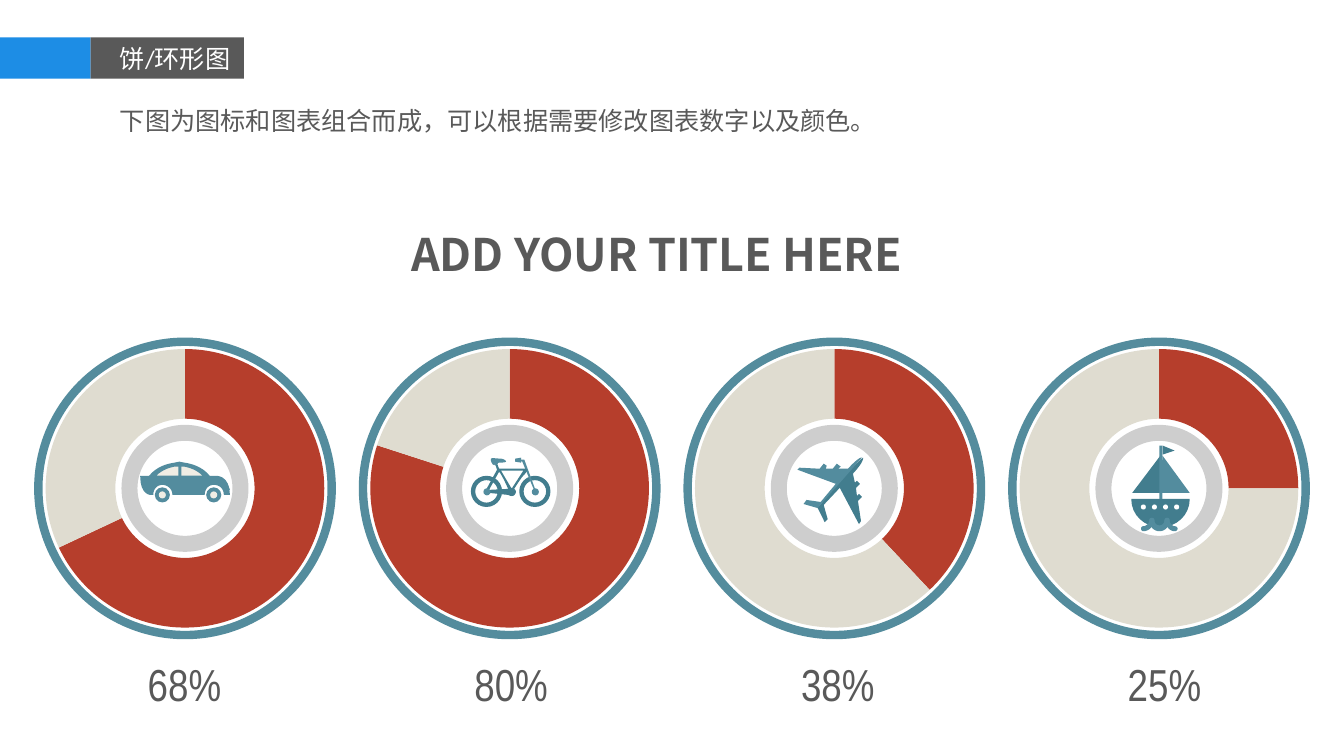
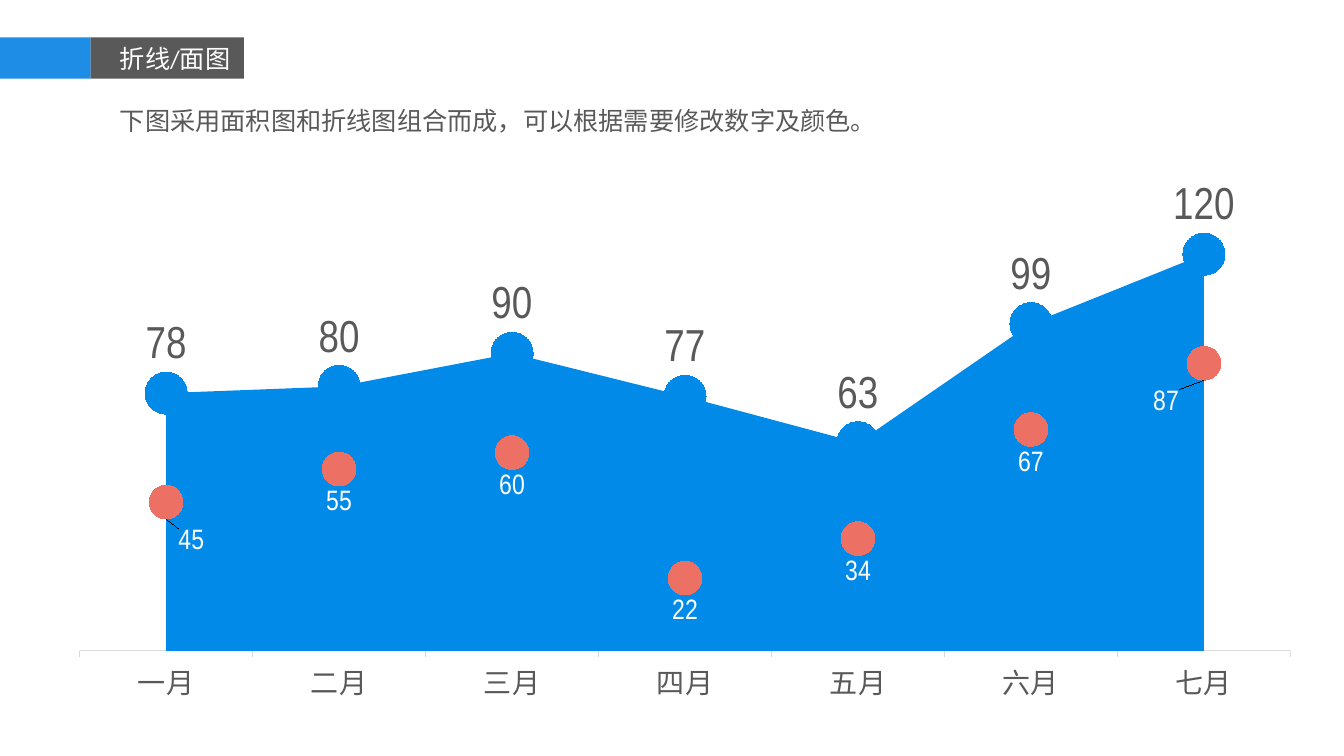
from pptx import Presentation
from pptx.chart.data import CategoryChartData
from pptx.dml.color import RGBColor
from pptx.enum.chart import XL_CHART_TYPE as ChartType, XL_LABEL_POSITION as LabelPosition
from pptx.enum.chart import XL_MARKER_STYLE as MarkerStyle, XL_TICK_MARK as TickMark
from pptx.enum.shapes import MSO_SHAPE as Preset
from pptx.enum.text import MSO_ANCHOR as Anchor, PP_ALIGN as Align
from pptx.oxml import parse_xml
from pptx.oxml.ns import nsdecls
from pptx.util import Inches, Pt

# Colours
WHITE = RGBColor(0xFF, 0xFF, 0xFF)
BLACK = RGBColor(0x00, 0x00, 0x00)
HEADER_BLUE = RGBColor(0x1D, 0x8D, 0xE5)
GREY = RGBColor(0x59, 0x59, 0x59)
RING = RGBColor(0x54, 0x8C, 0x9D)
RED = RGBColor(0xB6, 0x3E, 0x2C)
SAND = RGBColor(0xDF, 0xDC, 0xD0)
SHADE = RGBColor(0x0D, 0x0D, 0x0D)
DARK_TEAL = RGBColor(0x42, 0x7D, 0x8E)
TEAL = RGBColor(0x53, 0x8C, 0x9E)
CREAM = RGBColor(0xF0, 0xED, 0xE4)
AREA_BLUE = RGBColor(0x02, 0x8A, 0xE9)
CORAL = RGBColor(0xEC, 0x70, 0x64)
AXIS_GREY = RGBColor(0xD9, 0xD9, 0xD9)

# Fonts
BODY_FONT = "Calibri"
NUMBER_FONT = "Arial Narrow"
CHINESE_FONT = "Noto Sans CJK SC"


def flatten(contour, steps=8):
    """Turn a contour into points: pairs are corners, six numbers a cubic curve."""
    points = []
    for item in contour:
        if len(item) == 2:
            points.append(item)
            continue
        x0, y0 = points[-1]
        x1, y1, x2, y2, x3, y3 = item
        for step in range(1, steps + 1):
            t = step / steps
            u = 1 - t
            points.append((u**3 * x0 + 3 * u * u * t * x1 + 3 * u * t * t * x2 + t**3 * x3,
                           u**3 * y0 + 3 * u * u * t * y1 + 3 * u * t * t * y2 + t**3 * y3))
    return [(Inches(x), Inches(y)) for x, y in points]


def set_font(font, name, size, color, bold=False):
    font.name, font.size, font.bold = name, Pt(size), bold
    font.color.rgb = color


class Deck:
    def __init__(self):
        self.presentation = Presentation()
        self.presentation.slide_width = Inches(13.33)
        self.presentation.slide_height = Inches(7.5)
        self.slide = None

    def new_slide(self, heading, description):
        self.slide = self.presentation.slides.add_slide(self.presentation.slide_layouts[6])
        self.shape(Preset.RECTANGLE, 0, 0.37, 0.9, 0.41, HEADER_BLUE)
        self.shape(Preset.RECTANGLE, 0.9, 0.37, 1.52, 0.41, GREY)
        frame = self.text(heading, 1.09, 0.37, 1.4, 0.41, 18, color=WHITE)
        frame.margin_right = 0
        frame.vertical_anchor = Anchor.MIDDLE
        frame = self.text(description, 1.09, 0.94, 7.78, 0.46, 18)
        frame.paragraphs[0].line_spacing = 1.2

    def text(self, words, left, top, width, height, size, font=BODY_FONT,
             color=GREY, bold=False, align=Align.LEFT):
        box = self.slide.shapes.add_textbox(Inches(left), Inches(top), Inches(width), Inches(height))
        frame = box.text_frame
        frame.word_wrap = True
        paragraph = frame.paragraphs[0]
        paragraph.text = words
        paragraph.alignment = align
        set_font(paragraph.font, font, size, color, bold)
        return frame

    def finish(self, shape, color):
        shape.shadow.inherit = False
        shape.fill.solid()
        shape.fill.fore_color.rgb = color
        shape.line.fill.background()
        return shape

    def shape(self, preset, left, top, width, height, color):
        shape = self.slide.shapes.add_shape(
            preset, Inches(left), Inches(top), Inches(width), Inches(height))
        return self.finish(shape, color)

    def dot(self, x, y, diameter, color):
        return self.shape(Preset.OVAL, x - diameter / 2, y - diameter / 2, diameter, diameter, color)

    def outline(self, color, *contours):
        """Draw one freeform; later contours cut holes in the first."""
        builder = None
        for contour in contours:
            start, *rest = flatten(contour)
            if builder is None:
                builder = self.slide.shapes.build_freeform(*start)
            else:
                builder.move_to(*start)
            builder.add_line_segments(rest, close=True)
        return self.finish(builder.convert_to_shape(), color)

    def chart(self, kind, left, top, width, height, categories, series, layout):
        data = CategoryChartData()
        data.categories = categories
        for number, values in enumerate(series, 1):
            data.add_series(f"Series {number}", values)
        chart = self.slide.shapes.add_chart(
            kind, Inches(left), Inches(top), Inches(width), Inches(height), data).chart
        set_font(chart.font, BODY_FONT, 10, BLACK)
        chart.has_title = False
        chart.has_legend = False
        # Fixed inner plot area
        x, y, w, h = layout
        plot_area = chart.element.xpath("c:chart/c:plotArea")[0]
        for old_layout in plot_area.xpath("c:layout"):
            plot_area.remove(old_layout)
        plot_area.insert(0, parse_xml(
            f'<c:layout {nsdecls("c")}><c:manualLayout><c:layoutTarget val="inner"/>'
            '<c:xMode val="edge"/><c:yMode val="edge"/>'
            f'<c:x val="{x}"/><c:y val="{y}"/><c:w val="{w}"/><c:h val="{h}"/>'
            '</c:manualLayout></c:layout>'))
        return chart

    def gauge(self, left, percent):
        """Ringed doughnut chart with a translucent hub."""
        top, size, hub = 3.39, 2.91, 1.26
        ring = self.shape(Preset.OVAL, left, top, size, size, WHITE)
        ring.line.color.rgb = RING
        ring.line.width = Pt(6)
        chart = self.chart(ChartType.DOUGHNUT, left, top, size, size, ["1", "2"],
                           [(percent, 100 - percent)], (0.025, 0.025, 0.95, 0.95))
        plot = chart.plots[0]
        plot.has_data_labels = False
        plot.vary_by_categories = True
        chart.element.xpath(".//c:holeSize")[0].set("val", "35")
        for index, color in enumerate((RED, SAND)):
            point = plot.series[0].points[index]
            point.format.fill.solid()
            point.format.fill.fore_color.rgb = color
            point.format.line.fill.background()
        inset = (size - hub) / 2
        donut = self.shape(Preset.DONUT, left + inset, top + inset, hub, hub, SHADE)
        donut.adjustments[0] = 0.126
        color_element = donut.fill._xPr.xpath("a:solidFill/a:srgbClr")[0]
        color_element.append(parse_xml(f'<a:alpha {nsdecls("a")} val="20000"/>'))


# Icons
def draw_car(deck):
    deck.outline(TEAL, [(1.39, 4.72), (2.14, 4.72), (2.14, 4.72, 2.28, 4.71, 2.28, 4.91), (2.22, 4.91),
                        (2.22, 4.85, 2.18, 4.81, 2.12, 4.81), (2.07, 4.81, 2.03, 4.85, 2.03, 4.91),
                        (1.71, 4.91), (1.71, 4.85, 1.66, 4.81, 1.61, 4.81),
                        (1.56, 4.81, 1.52, 4.85, 1.52, 4.91), (1.5, 4.91),
                        (1.5, 4.91, 1.39, 4.92, 1.39, 4.72)])
    deck.outline(CREAM, [(1.66, 4.62), (1.67, 4.61), (1.91, 4.61), (1.94, 4.63, 1.98, 4.64, 2.01, 4.67),
                         (2.05, 4.72), (2.05, 4.75), (1.53, 4.75), (1.53, 4.7)])
    deck.outline(TEAL,
                 [(1.48, 4.72), (1.55, 4.63, 1.66, 4.6, 1.73, 4.59), (1.78, 4.58), (1.83, 4.59),
                  (1.9, 4.6, 2.01, 4.63, 2.08, 4.72), (2.11, 4.76), (1.45, 4.76)],
                 [(1.83, 4.63), (1.73, 4.63), (1.68, 4.64, 1.61, 4.66, 1.55, 4.72), (2.01, 4.72),
                  (1.95, 4.66, 1.88, 4.64, 1.83, 4.63)])
    deck.shape(Preset.RECTANGLE, 1.77, 4.6, 0.03, 0.15, TEAL)
    deck.outline(TEAL, [(2.24, 4.86), (2.23, 4.86, 2.22, 4.85, 2.22, 4.83), (2.22, 4.82, 2.23, 4.81, 2.24, 4.81),
                        (2.26, 4.81), (2.28, 4.86)])
    for x in (1.61, 2.12):
        deck.dot(x, 4.91, 0.15, TEAL)
        deck.dot(x, 4.91, 0.07, CREAM)


def draw_bicycle(deck):
    for left in (4.67, 5.15):
        wheel = deck.shape(Preset.DONUT, left, 4.72, 0.31, 0.31, DARK_TEAL)
        wheel.adjustments[0] = 0.14
    # Fork, frame, saddle and handlebar
    deck.outline(TEAL, [(5.31, 4.86), (5.2, 4.56), (5.12, 4.56), (5.12, 4.57), (5.18, 4.58), (5.3, 4.87)])
    deck.outline(DARK_TEAL,
                 [(5.22, 4.65), (4.95, 4.65), (4.92, 4.57), (4.91, 4.6), (4.93, 4.66), (4.82, 4.86),
                  (4.84, 4.88), (4.85, 4.89), (5.04, 4.91), (5.04, 4.91, 5.09, 4.94, 5.11, 4.9),
                  (5.13, 4.87, 5.1, 4.85, 5.1, 4.85), (5.1, 4.85, 5.18, 4.72, 5.2, 4.71), (5.23, 4.67)],
                 [(4.85, 4.86), (4.95, 4.68), (4.98, 4.71, 5.04, 4.85, 5.04, 4.85)],
                 [(5.08, 4.84), (5.07, 4.84), (4.97, 4.67), (5.19, 4.67)])
    deck.outline(TEAL, [(5.02, 4.58), (5.02, 4.58, 5.02, 4.56, 4.97, 4.55), (4.93, 4.55, 4.88, 4.54, 4.87, 4.55),
                        (4.86, 4.56, 4.88, 4.6, 4.89, 4.61), (4.91, 4.62, 4.93, 4.59, 4.95, 4.59),
                        (4.96, 4.59, 5.01, 4.59, 5.02, 4.58)])
    for x in (4.83, 5.31):
        deck.dot(x, 4.88, 0.07, TEAL)
    deck.outline(TEAL, [(4.93, 4.59), (4.91, 4.61), (4.91, 4.62), (4.94, 4.6)])
    deck.outline(TEAL, [(5.17, 4.59), (5.17, 4.54), (5.11, 4.55), (5.11, 4.58)])


def draw_plane(deck):
    deck.outline(DARK_TEAL, [(8.46, 4.7), (8.48, 4.79), (8.5, 4.77), (8.53, 4.8), (8.49, 4.84), (8.5, 4.92),
                             (8.52, 4.9), (8.55, 4.93), (8.51, 4.97), (8.54, 5.17), (8.52, 5.2),
                             (8.33, 4.84), (8.17, 5.01), (8.21, 5.15), (8.18, 5.18), (8.11, 5.04),
                             (8.37, 4.72), (8.56, 4.54), (8.56, 4.54, 8.58, 4.57, 8.46, 4.7)])
    deck.outline(TEAL, [(8.41, 4.65), (8.31, 4.65), (8.34, 4.63), (8.3, 4.6), (8.26, 4.65), (8.19, 4.65),
                        (8.2, 4.62), (8.17, 4.6), (8.13, 4.65), (7.93, 4.64), (7.91, 4.66), (8.29, 4.8),
                        (8.14, 4.98), (8, 4.96), (7.97, 5), (8.11, 5.04), (8.55, 4.54),
                        (8.55, 4.54, 8.53, 4.52, 8.41, 4.65)])


def draw_boat(deck):
    deck.outline(DARK_TEAL, [(11.22, 4.95), (11.22, 5.11, 11.35, 5.23, 11.51, 5.23),
                             (11.67, 5.23, 11.8, 5.11, 11.8, 4.95)])
    for porthole in range(4):
        deck.dot(11.34 + 0.11 * porthole, 5.03, 0.05, WHITE)
    # Sails, mast and flag
    deck.outline(DARK_TEAL, [(11.51, 4.52), (11.23, 4.89), (11.53, 4.89)])
    deck.outline(TEAL, [(11.53, 4.52), (11.8, 4.89), (11.51, 4.89)])
    deck.shape(Preset.RECTANGLE, 11.5, 4.42, 0.03, 0.53, TEAL)
    deck.outline(DARK_TEAL, [(11.53, 4.42), (11.65, 4.47), (11.53, 4.51)])
    # Waves
    deck.outline(TEAL, [(11.4, 5.16), (11.4, 5.19, 11.37, 5.22, 11.34, 5.22), (11.31, 5.22, 11.31, 5.27, 11.34, 5.27),
                        (11.4, 5.27, 11.44, 5.22, 11.45, 5.16), (11.45, 5.13, 11.4, 5.13, 11.4, 5.16)])
    deck.outline(TEAL, [(11.55, 5.16), (11.55, 5.23, 11.45, 5.23, 11.45, 5.16), (11.44, 5.13, 11.4, 5.13, 11.4, 5.16),
                        (11.4, 5.22, 11.44, 5.27, 11.5, 5.27), (11.56, 5.27, 11.6, 5.22, 11.6, 5.16),
                        (11.6, 5.13, 11.56, 5.13, 11.55, 5.16)])
    deck.outline(TEAL, [(11.65, 5.22), (11.63, 5.22, 11.6, 5.19, 11.6, 5.16), (11.6, 5.13, 11.55, 5.13, 11.55, 5.16),
                        (11.56, 5.22, 11.6, 5.27, 11.65, 5.27), (11.69, 5.27, 11.69, 5.22, 11.65, 5.22)])


def add_gauge_slide(deck):
    deck.new_slide("饼/环形图", "下图为图标和图表组合而成，可以根据需要修改图表数字以及颜色。")
    deck.text("ADD YOUR TITLE HERE", 3.98, 2.2, 5.37, 0.64, 32, CHINESE_FONT, bold=True)
    gauges = [(68, draw_car), (80, draw_bicycle), (38, draw_plane), (25, draw_boat)]
    for column, (percent, draw_icon) in enumerate(gauges):
        deck.gauge(0.38 + 3.22 * column, percent)
        draw_icon(deck)
        deck.text(f"{percent}%", 1.33 + 3.24 * column, 6.47, 1, 0.64, 32, NUMBER_FONT, align=Align.CENTER)


def add_area_slide(deck):
    deck.new_slide("折线/面图", "下图采用面积图和折线图组合而成，可以根据需要修改数字及颜色。")
    months = ["一月", "二月", "三月", "四月", "五月", "六月", "七月"]
    upper = (78, 80, 90, 77, 63, 99, 120)
    lower = (45, 55, 60, 22, 34, 67, 87)
    chart = deck.chart(ChartType.AREA, 0.54, 1.76, 12.51, 5.34, months,
                       [upper, lower, upper, lower], (0.02, 0.02, 0.96, 0.86))

    # Axes
    axis = chart.category_axis
    axis.major_tick_mark = TickMark.OUTSIDE
    axis.has_major_gridlines = False
    axis.format.line.color.rgb = AXIS_GREY
    axis.format.line.width = Pt(0.75)
    set_font(axis.tick_labels.font, CHINESE_FONT, 20, GREY)
    value_axis = chart.value_axis
    value_axis.minimum_scale, value_axis.maximum_scale = 0, 140
    value_axis.has_major_gridlines = False
    value_axis.visible = False
    chart.element.xpath(".//c:crossBetween")[0].set("val", "between")

    # Move the last two series to a line plot on the same axes
    area = chart.element.xpath(".//c:areaChart")[0]
    line = parse_xml(f'<c:lineChart {nsdecls("c")}><c:grouping val="standard"/>'
                     '<c:varyColors val="0"/><c:marker val="1"/></c:lineChart>')
    for series_element in area.xpath("c:ser")[2:]:
        line.insert(len(line) - 1, series_element)
    for axis_id in area.xpath("c:axId"):
        line.append(parse_xml(f'<c:axId {nsdecls("c")} val="{axis_id.get("val")}"/>'))
    area.addnext(line)

    area_plot, line_plot = chart.plots
    area_plot.vary_by_categories = False
    for series, color in zip(area_plot.series, (AREA_BLUE, CORAL)):
        series.format.fill.solid()
        series.format.fill.fore_color.rgb = color

    # Markers and labels
    styles = [(AREA_BLUE, 30, LabelPosition.ABOVE, 32, GREY), (CORAL, 24, LabelPosition.BELOW, 20, WHITE)]
    for series, (color, diameter, position, size, label_color) in zip(line_plot.series, styles):
        series.smooth = False
        series.format.line.fill.background()
        series.marker.style = MarkerStyle.CIRCLE
        series.marker.size = diameter
        series.marker.format.fill.solid()
        series.marker.format.fill.fore_color.rgb = color
        series.marker.format.line.fill.background()
        labels = series.data_labels
        labels.show_value = True
        labels.position = position
        set_font(labels.font, NUMBER_FONT, size, label_color)

    # Shift the end labels inwards, onto the area
    for index, shift in ((0, 0.02), (6, -0.03)):
        label = line_plot.series[1].points[index].data_label
        set_font(label.font, NUMBER_FONT, 20, WHITE)
        label.position = LabelPosition.BELOW
        index_element = line.xpath(f'c:ser[2]/c:dLbls/c:dLbl/c:idx[@val="{index}"]')[0]
        index_element.addnext(parse_xml(
            f'<c:layout {nsdecls("c")}><c:manualLayout><c:x val="{shift}"/><c:y val="0.01"/>'
            '</c:manualLayout></c:layout>'))


def main():
    deck = Deck()
    add_gauge_slide(deck)
    add_area_slide(deck)
    deck.presentation.save("out.pptx")


if __name__ == "__main__":
    main()
